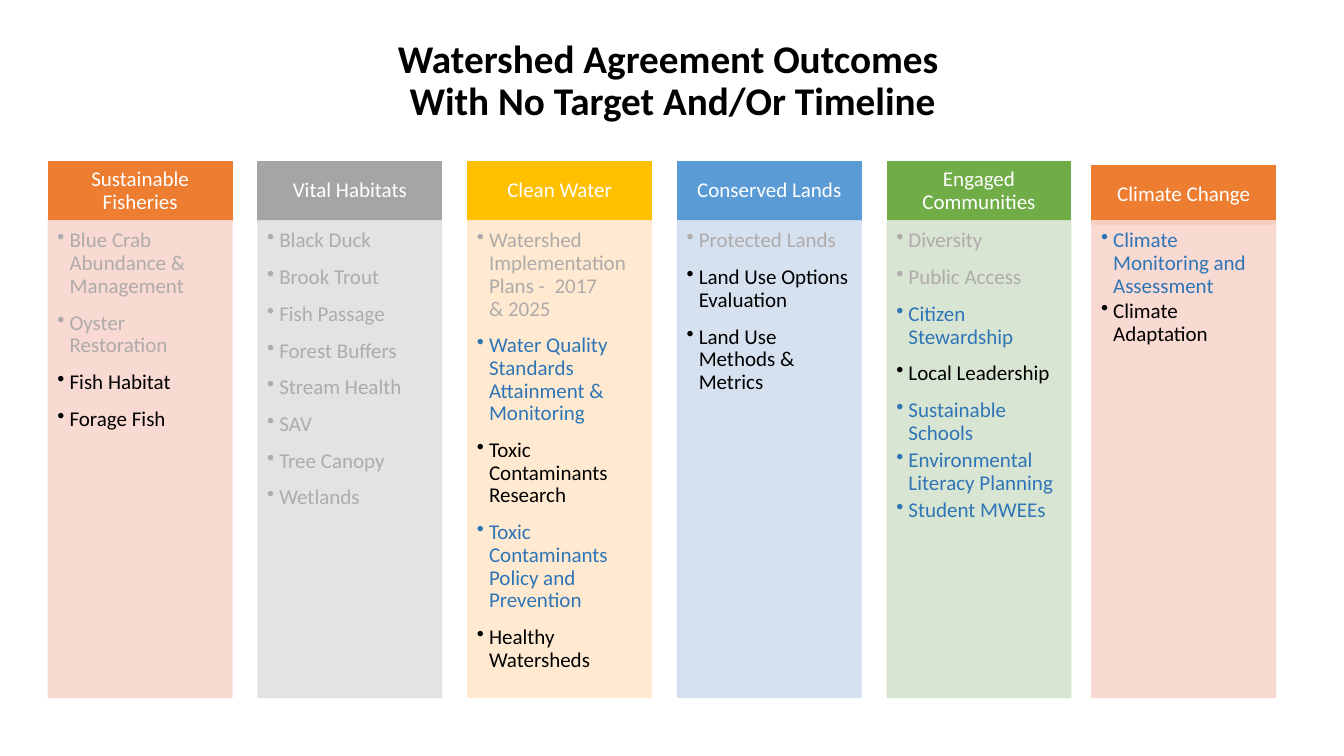
from copy import deepcopy
from dataclasses import dataclass

from lxml import etree
from pptx import Presentation
from pptx.dml.color import RGBColor
from pptx.enum import shapes, text
from pptx.oxml import ns
from pptx.util import Inches, Pt

GREY, BLUE, BLACK, WHITE = "AFABAB", "2E75B6", "000000", "FFFFFF"
FIRST_LEFT, PITCH, WIDTH = 0.48, 2.08, 1.82
HEADER_TOP, HEADER_HEIGHT = 1.6, 0.59
BODY_TOP, BODY_HEIGHT = 2.19, 4.73
INDENT = 0.12


@dataclass
class Outcome:
    name: str
    color: str = GREY
    space_after: float = 10


@dataclass
class Goal:
    name: str
    color: str
    tint: str
    outcomes: list[Outcome]
    shift_x: float = 0
    shift_y: float = 0


GOALS = [
    Goal("Sustainable Fisheries", "ED7D31", "F8D7CE", [
        Outcome("Blue Crab Abundance & Management"),
        Outcome("Oyster Restoration"),
        Outcome("Fish Habitat", BLACK),
        Outcome("Forage Fish", BLACK),
    ]),
    Goal("Vital Habitats", "A5A5A5", "E1E1E1", [
        Outcome(name) for name in (
            "Black Duck", "Brook Trout", "Fish Passage", "Forest Buffers",
            "Stream Health", "SAV", "Tree Canopy", "Wetlands")
    ]),
    Goal("Clean Water", "FFC000", "FFE8CC", [
        Outcome("Watershed Implementation Plans -  2017\v& 2025"),
        Outcome("Water Quality Standards Attainment & Monitoring", BLUE),
        Outcome("Toxic Contaminants Research", BLACK),
        Outcome("Toxic Contaminants Policy and Prevention", BLUE),
        Outcome("Healthy Watersheds", BLACK),
    ]),
    Goal("Conserved Lands", "5B9BD5", "D2DEEF", [
        Outcome("Protected Lands"),
        Outcome("Land Use Options Evaluation", BLACK),
        Outcome("Land Use Methods & Metrics", BLACK),
    ]),
    Goal("Engaged Communities", "70AD47", "D5E3CF", [
        Outcome("Diversity"),
        Outcome("Public Access"),
        Outcome("Citizen Stewardship", BLUE),
        Outcome("Local Leadership", BLACK),
        Outcome("Sustainable Schools", BLUE, 3.4),
        Outcome("Environmental Literacy Planning", BLUE, 3.4),
        Outcome("Student MWEEs", BLUE, 3.4),
    ]),
    Goal("Climate Change", "ED7D31", "F8D7CE", [
        Outcome("Climate Monitoring and Assessment", BLUE, 2),
        Outcome("Climate Adaptation", BLACK, 2),
    ], shift_x=-0.05, shift_y=0.04),
]


def set_color(fmt, color: str, opacity: int = 100) -> None:
    """Make a fill solid in the hex colour, with opacity in percent."""
    fmt.solid()
    fmt.fore_color.rgb = RGBColor.from_string(color)
    if opacity < 100:
        srgb = fmt._xPr.find(".//" + ns.qn("a:srgbClr"))
        etree.SubElement(srgb, ns.qn("a:alpha"), val=str(opacity * 1000))


def write(p, content: str, size: float, color: str, bold: bool = False) -> None:
    p.text = content
    p.line_spacing = 0.9
    for r in p.runs:
        r.font.name = "Calibri"
        r.font.size = Pt(size)
        r.font.bold = bold
        set_color(r.font.fill, color)
    for br in p._p.findall(ns.qn("a:br")):
        br.insert(0, deepcopy(p.runs[0]._r.rPr))


def add_bullet(p) -> None:
    pPr = p._p.get_or_add_pPr()
    pPr.set("marL", str(Inches(INDENT)))
    pPr.set("indent", str(-Inches(INDENT)))
    etree.SubElement(pPr, ns.qn("a:buChar"), char="•")


def set_frame(tf, anchor, margins: tuple[float, float, float, float]) -> None:
    tf.word_wrap = True
    tf.vertical_anchor = anchor
    tf.margin_left, tf.margin_top, tf.margin_right, tf.margin_bottom = map(Inches, margins)


def add_box(s, left: float, top: float, height: float, color: str, opacity: int = 100):
    sp = s.shapes.add_shape(shapes.MSO_SHAPE.RECTANGLE, Inches(left), Inches(top),
                            Inches(WIDTH), Inches(height))
    sp.shadow.inherit = False
    set_color(sp.fill, color, opacity)
    set_color(sp.line.fill, color, opacity)
    sp.line.width = Pt(1)
    return sp


def add_goal(s, goal: Goal, left: float) -> None:
    header = add_box(s, left, HEADER_TOP + goal.shift_y, HEADER_HEIGHT, goal.color)
    tf = header.text_frame
    set_frame(tf, text.MSO_ANCHOR.MIDDLE, (0.12, 0.07, 0.12, 0.07))
    write(tf.paragraphs[0], goal.name, 15, WHITE)
    tf.paragraphs[0].alignment = text.PP_ALIGN.CENTER

    body = add_box(s, left, BODY_TOP, BODY_HEIGHT, goal.tint, 90)
    tf = body.text_frame
    set_frame(tf, text.MSO_ANCHOR.TOP, (0.09, 0.09, 0.12, 0.13))
    for i, outcome in enumerate(goal.outcomes):
        p = tf.add_paragraph() if i else tf.paragraphs[0]
        write(p, outcome.name, 15, outcome.color)
        p.alignment = text.PP_ALIGN.LEFT
        p.space_after = Pt(outcome.space_after)
        add_bullet(p)


def add_title(s) -> None:
    title = s.shapes.title
    title.left, title.top, title.width, title.height = map(Inches, (0.68, 0.16, 11.98, 1.3))
    tf = title.text_frame
    tf.auto_size = text.MSO_AUTO_SIZE.NONE
    set_frame(tf, text.MSO_ANCHOR.MIDDLE, (0.1, 0.05, 0.1, 0.05))
    p = tf.paragraphs[0]
    write(p, "Watershed Agreement Outcomes \vWith No Target And/Or Timeline", 28, BLACK, bold=True)
    p.alignment = text.PP_ALIGN.CENTER


def main() -> None:
    prs = Presentation()
    prs.slide_width, prs.slide_height = Inches(13.33), Inches(7.5)
    s = prs.slides.add_slide(prs.slide_layouts.get_by_name("Title Only"))
    add_title(s)
    for i, goal in enumerate(GOALS):
        add_goal(s, goal, FIRST_LEFT + i * PITCH + goal.shift_x)
    prs.save("out.pptx")


if __name__ == "__main__":
    main()
